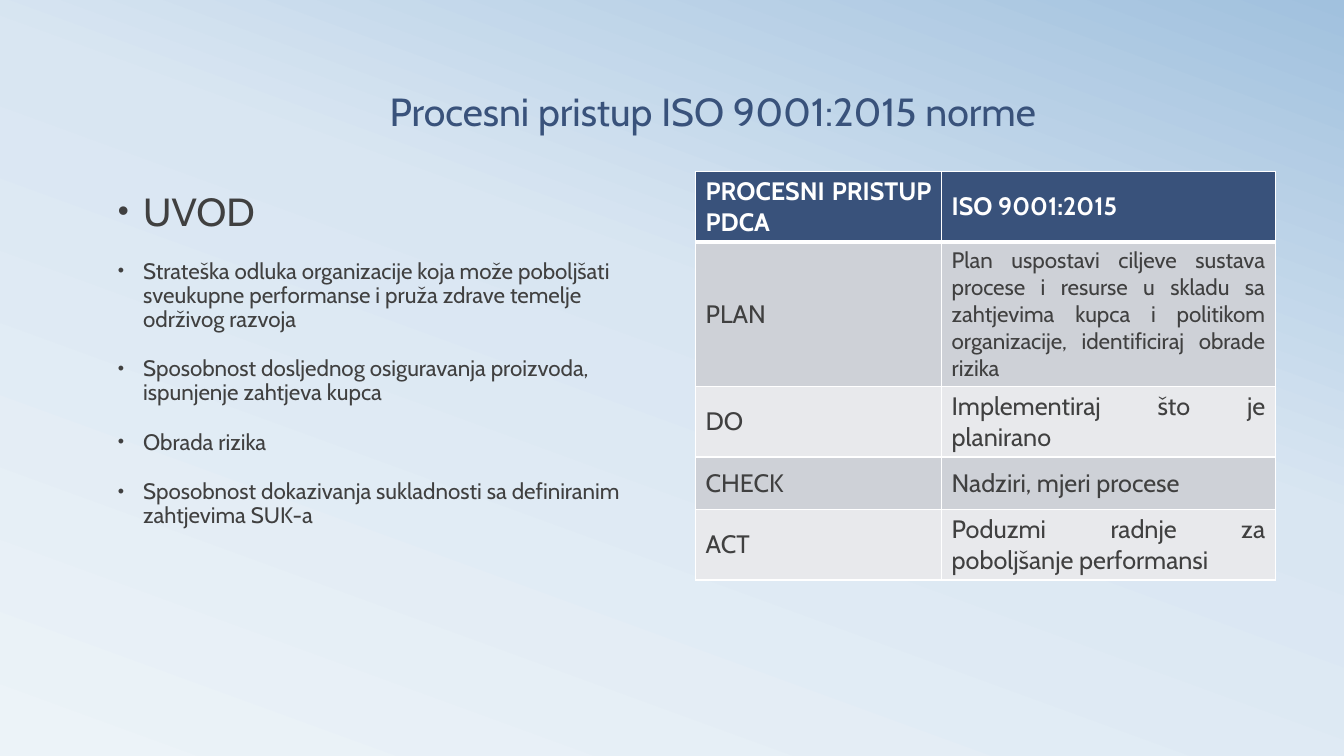
from copy import deepcopy
from dataclasses import dataclass

from lxml.etree import SubElement
from pptx import Presentation
from pptx.dml.color import RGBColor
from pptx.enum.text import MSO_ANCHOR, PP_ALIGN
from pptx.oxml.ns import qn
from pptx.util import Cm, Pt


@dataclass(frozen=True)
class Theme:
    """Colours, font and type sizes of the slide."""
    font: str = "Cabin"
    navy: str = "39527B"
    ink: str = "404040"
    white: str = "FFFFFF"
    bands: tuple = ("E8E9EC", "CED1D7")
    sky: tuple = ((0, "ECF3F8"), (0.58, "D9E6F2"), (1, "A1C1DE"))
    sky_angle: int = 70
    large: int = 28
    medium: int = 18
    small: int = 16


class SlideBuilder:
    """Adds styled elements to the current slide."""

    def __init__(self, s, theme):
        self.s, self.theme = s, theme

    def background(self):
        """Fill the background with the sky gradient."""
        fill = self.s.background.fill
        fill.gradient()
        fill.gradient_angle = self.theme.sky_angle
        stops = self.s.element.find(".//" + qn("a:gsLst"))
        stops.append(deepcopy(stops[-1]))
        for stop, (position, color) in zip(fill.gradient_stops, self.theme.sky):
            stop.position = position
            stop.color.rgb = RGBColor.from_string(color)

    def run(self, p, text, size, color, bold=False):
        """Add one styled run to a paragraph."""
        r = p.add_run()
        r.text = text
        r.font.name = self.theme.font
        r.font.size = Pt(size)
        r.font.bold = bold
        r.font.color.rgb = RGBColor.from_string(color)

    def text_frame(self, left, top, width, height, anchor):
        """Add a wrapping text box and return its frame."""
        sp = self.s.shapes.add_textbox(Cm(left), Cm(top), Cm(width), Cm(height))
        tf = sp.text_frame
        tf.word_wrap = True
        tf.vertical_anchor = anchor
        return tf

    def title(self, text, *box):
        """Add the centred title."""
        p = self.text_frame(*box, MSO_ANCHOR.BOTTOM).paragraphs[0]
        p.alignment = PP_ALIGN.CENTER
        p.line_spacing = 0.8
        self.run(p, text, self.theme.large, self.theme.navy)

    def bullet(self, p):
        """Give a paragraph a hanging round bullet."""
        pPr = p._p.get_or_add_pPr()
        pPr.set("marL", str(Cm(0.64)))
        pPr.set("indent", str(Cm(-0.64)))
        color = SubElement(pPr, qn("a:buClr"))
        SubElement(color, qn("a:srgbClr"), val=self.theme.ink)
        SubElement(pPr, qn("a:buSzPct"), val="80000")
        SubElement(pPr, qn("a:buFont"), typeface="Arial")
        SubElement(pPr, qn("a:buChar"), char="•")

    def bullets(self, heading, items, *box):
        """Add a bulleted list led by a larger heading."""
        tf = self.text_frame(*box, MSO_ANCHOR.TOP)
        for i, text in enumerate([heading, *items]):
            p = tf.add_paragraph() if i else tf.paragraphs[0]
            p.line_spacing = 0.9
            p.space_before = Pt(18)
            self.bullet(p)
            size = self.theme.small if i else self.theme.large
            self.run(p, text, size, self.theme.ink)

    def borders(self, cell, top, bottom):
        """Draw white cell borders, with top and bottom widths in points."""
        tcPr = cell._tc.get_or_add_tcPr()
        for side, width in (("L", 1), ("R", 1), ("T", top), ("B", bottom)):
            ln = SubElement(tcPr, qn(f"a:ln{side}"), w=str(Pt(width)))
            fill = SubElement(ln, qn("a:solidFill"))
            SubElement(fill, qn("a:srgbClr"), val=self.theme.white)

    def cell(self, cell, row, text, size):
        """Style one table cell and write its text."""
        t = self.theme
        header = row == 0
        self.borders(cell, 3 if row == 1 else 1, 3 if header else 1)
        cell.fill.solid()
        color = t.navy if header else t.bands[row % 2]
        cell.fill.fore_color.rgb = RGBColor.from_string(color)
        cell.vertical_anchor = MSO_ANCHOR.MIDDLE
        p = cell.text_frame.paragraphs[0]
        p.alignment = PP_ALIGN.JUSTIFY
        self.run(p, text, size, t.white if header else t.ink, header)

    def table(self, rows, widths, left, top, row_height):
        """Add a banded table with a header row."""
        frame = self.s.shapes.add_table(
            len(rows), len(widths), Cm(left), Cm(top),
            Cm(sum(widths)), Cm(row_height * len(rows)))
        table = frame.table
        for column, width in zip(table.columns, widths):
            column.width = Cm(width)
        for i, texts in enumerate(rows):
            for j, text in enumerate(texts):
                size = self.theme.small if len(text) > 100 else self.theme.medium
                self.cell(table.cell(i, j), i, text, size)


BENEFITS = [
    "Strateška odluka organizacije koja može poboljšati sveukupne performanse "
    "i pruža zdrave temelje održivog razvoja",
    "Sposobnost dosljednog osiguravanja proizvoda, ispunjenje zahtjeva kupca",
    "Obrada rizika",
    "Sposobnost dokazivanja sukladnosti sa definiranim zahtjevima SUK-a",
]
PDCA = [
    ("PROCESNI PRISTUP PDCA", "ISO 9001:2015"),
    ("PLAN", "Plan uspostavi ciljeve sustava procese i resurse u skladu sa "
             "zahtjevima kupca i politikom organizacije, identificiraj obrade rizika"),
    ("DO", "Implementiraj što je planirano"),
    ("CHECK", "Nadziri, mjeri procese"),
    ("ACT", "Poduzmi radnje za poboljšanje performansi"),
]


def main():
    """Build and save the slide."""
    prs = Presentation()
    prs.slide_width, prs.slide_height = Cm(33.87), Cm(19.05)
    builder = SlideBuilder(prs.slides.add_slide(prs.slide_layouts[6]), Theme())
    builder.background()
    builder.title("Procesni pristup ISO 9001:2015 norme", 2.72, 0.53, 30.48, 2.97)
    builder.bullets("UVOD", BENEFITS, 2.72, 4.72, 13.97, 11.63)
    builder.table(PDCA, (6.2, 8.41), 17.53, 4.32, 1.32)
    prs.save("out.pptx")


if __name__ == "__main__":
    main()
